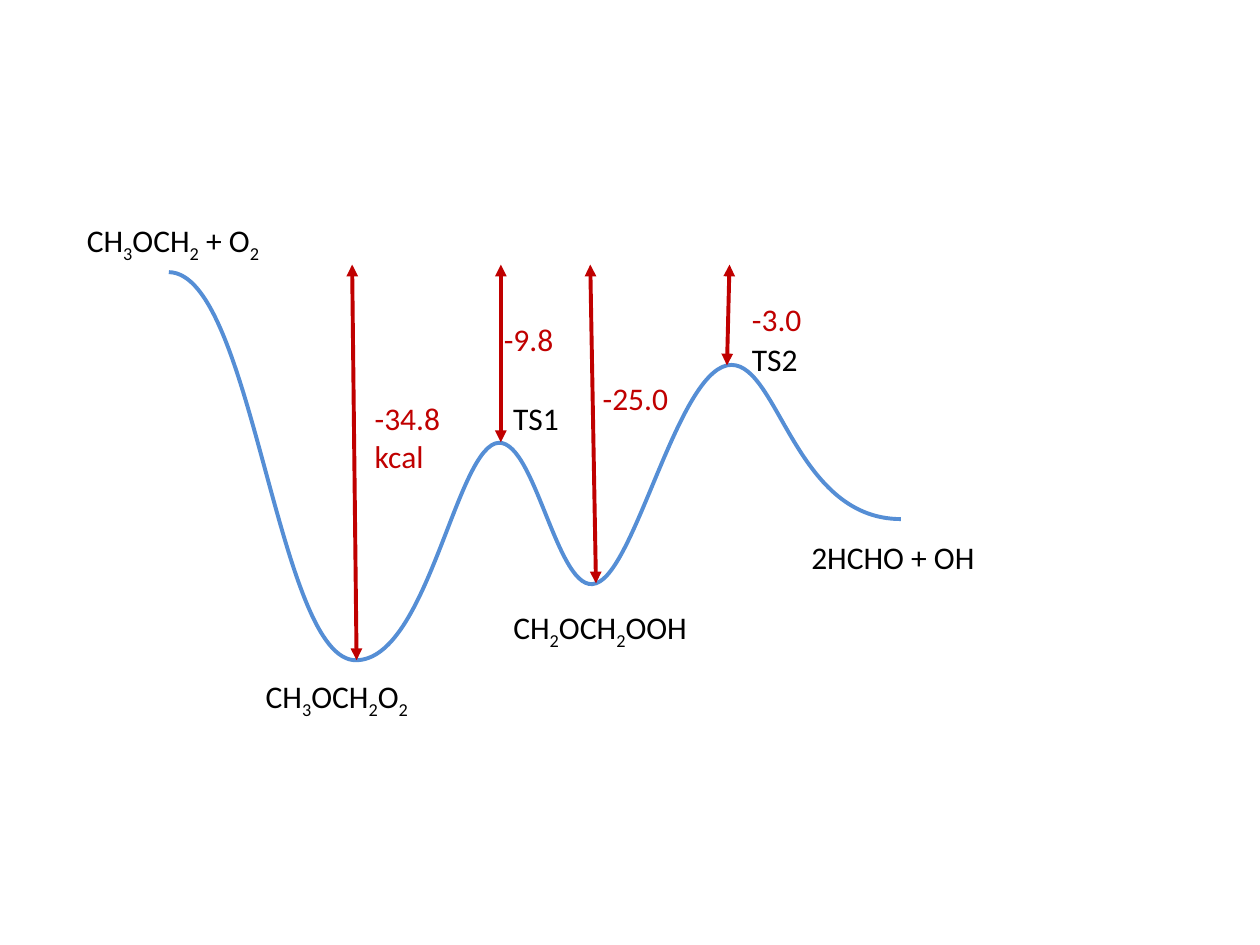
from pptx import Presentation
from pptx import util as u
from pptx.dml import color
from pptx.enum import shapes, text
from pptx.oxml import ns, xmlchemy

BLUE, RED, BLACK = "558ED5", "C00000", "000000"
ROW = 4
ZERO_LEVEL = 4

CURVE_START = (7.5, 4.6)
CURVE = [
    ((14.2, 4.7), (16.1, 35.6), (22.4, 35.4)),
    ((27.9, 35.3), (30.2, 19.3), (33.4, 18.2)),
    ((36.5, 17.2), (38.3, 30.4), (41.4, 29.3)),
    ((44.5, 28.3), (47.8, 12.9), (51.8, 12)),
    ((55.8, 11.2), (57, 24.2), (65.6, 24.2)),
]
SPECIES = [
    ("CH_3OCH_2 + O_2", 0, 0.05, 16.2),
    ("CH_3OCH_2O_2", 14.2, 36.25, 13.8),
    ("TS1", 33.85, 14.2, 5.7),
    ("TS2", 52.8, 9.5, 5.7),
    ("2HCHO + OH", 57.5, 25.2, 15.1),
    ("CH_2OCH_2OOH", 33.85, 30.75, 16.2),
]
ENERGIES = [
    ((22.05, 22.4, 35.4), ("-34.8\nkcal", 22.85, 14.2, 7.3)),
    ((33.85, 33.85, 18.1), ("-9.8", 33.1, 7.9, 6)),
    ((40.95, 41.4, 29.3), ("-25.0", 40.95, 12.6, 7.3)),
    ((52, 51.8, 12), ("-3.0", 52.8, 6.3, 6)),
]


def rgb(value):
    """Return the colour for a hex string."""
    return color.RGBColor.from_string(value)


def style_line(line, value):
    """Give a line its colour and the common width."""
    line.color.rgb = rgb(value)
    line.width = u.Pt(2.25)


def add_curve(parts, place):
    """Draw the reaction energy curve with one cubic segment per step."""
    builder = parts.build_freeform(*place(*CURVE_START))
    builder.add_line_segments([place(*points[-1]) for points in CURVE], close=False)
    sp = builder.convert_to_shape()
    sp.shadow.inherit = False
    sp.fill.background()
    style_line(sp.line, BLUE)
    segments = list(sp._element.iter(ns.qn("a:lnTo")))
    for segment, points in zip(segments, CURVE):
        cubic = xmlchemy.OxmlElement("a:cubicBezTo")
        for point in points:
            x, y = place(*point)
            pt = xmlchemy.OxmlElement("a:pt")
            pt.set("x", str(x - sp.left))
            pt.set("y", str(y - sp.top))
            cubic.append(pt)
        segment.getparent().replace(segment, cubic)


def add_label(parts, place, cell, label, x, y, width, value):
    """Add a label in which an underscore lowers the next character."""
    lines = label.split("\n")
    height = ROW + 3.1 * (len(lines) - 1)
    sp = parts.add_textbox(*place(x, y), int(width * cell), int(height * cell))
    tf = sp.text_frame
    tf.word_wrap = False
    tf.auto_size = text.MSO_AUTO_SIZE.SHAPE_TO_FIT_TEXT
    for i, line in enumerate(lines):
        p = tf.add_paragraph() if i else tf.paragraphs[0]
        first, *rest = line.split("_")
        pieces = [(first, False)]
        for piece in rest:
            pieces += [(piece[:1], True), (piece[1:], False)]
        for piece, lowered in pieces:
            if not piece:
                continue
            r = p.add_run()
            r.text = piece
            r.font.name, r.font.size = "Calibri", u.Pt(18)
            r.font.color.rgb = rgb(value)
            if lowered:
                r.font._element.set("baseline", "-25000")


def add_arrow(parts, place, x_top, x_end, y_end):
    """Add a double arrow from the zero level to a point of the curve."""
    begin, end = place(x_top, ZERO_LEVEL), place(x_end, y_end)
    sp = parts.add_connector(shapes.MSO_CONNECTOR.STRAIGHT, *begin, *end)
    style_line(sp.line, RED)
    ln = sp.line._get_or_add_ln()
    for tag in ("a:headEnd", "a:tailEnd"):
        tip = xmlchemy.OxmlElement(tag)
        tip.set("type", "triangle")
        ln.append(tip)
    sp._element.spPr.append(xmlchemy.OxmlElement("a:effectLst"))


def add_energy_diagram(s, left, top, cell):
    """Place the energy diagram on a square grid that starts at left, top."""
    parts = s.shapes.add_group_shape().shapes

    def place(x, y):
        """Turn columns and rows into slide lengths."""
        return round(left + x * cell), round(top + y * cell)

    add_curve(parts, place)
    for label in SPECIES:
        add_label(parts, place, cell, *label, BLACK)
    for arrow, label in ENERGIES:
        add_arrow(parts, place, *arrow)
        add_label(parts, place, cell, *label, RED)


def main():
    """Build the slide and save it."""
    prs = Presentation()
    prs.slide_width, prs.slide_height = u.Inches(10), u.Inches(7.5)
    s = prs.slides.add_slide(prs.slide_layouts[6])
    cell = prs.slide_width / 100
    add_energy_diagram(s, 5.9 * cell, 17 * cell, cell)
    prs.save("out.pptx")


if __name__ == "__main__":
    main()
